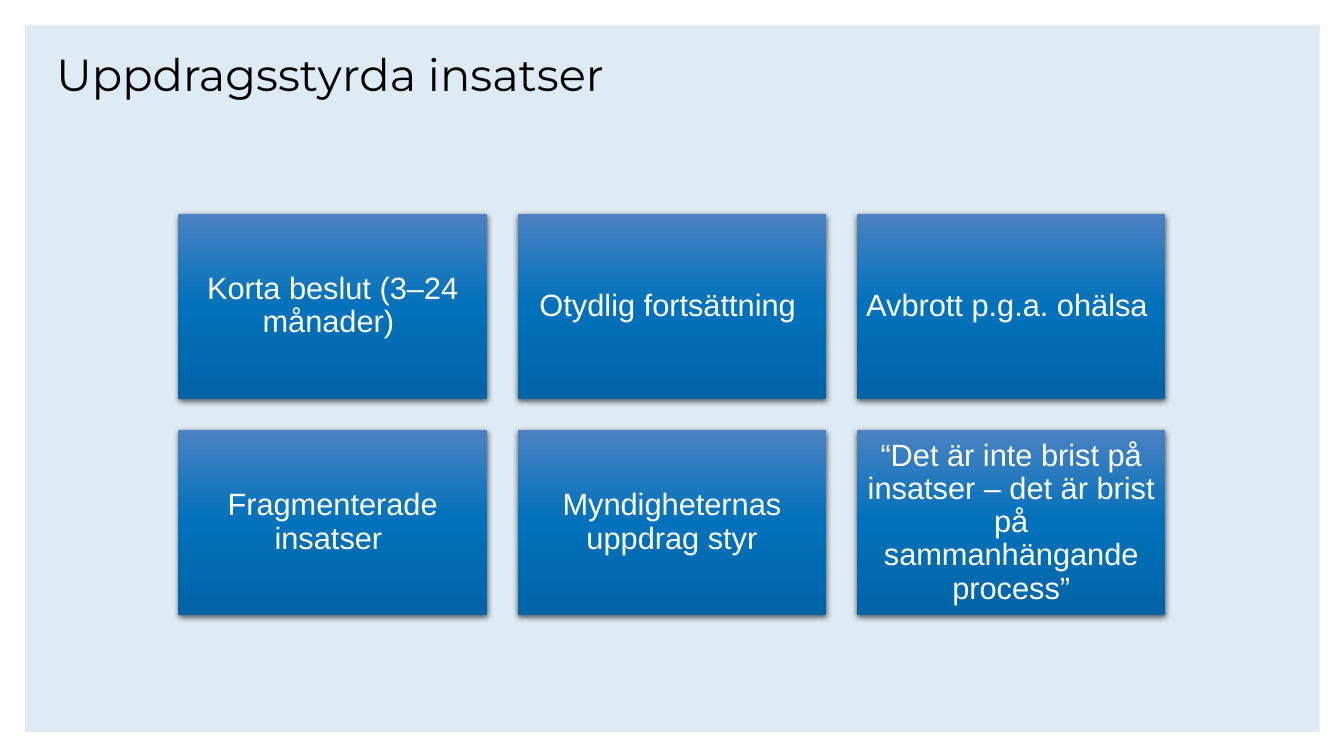
from lxml.etree import SubElement
from pptx import Presentation
from pptx.dml.color import RGBColor
from pptx.enum.shapes import MSO_SHAPE
from pptx.enum.text import MSO_ANCHOR, MSO_AUTO_SIZE, PP_ALIGN
from pptx.oxml.ns import qn
from pptx.util import Inches, Pt

HEADING = "Uppdragsstyrda insatser"
OBSTACLES = [
    "Korta beslut (3–24 månader) ",
    "Otydlig fortsättning ",
    "Avbrott p.g.a. ohälsa ",
    "Fragmenterade insatser ",
    "Myndigheternas uppdrag styr",
    "“Det är inte brist på insatser – det är brist på sammanhängande process”",
]
COLORS = {
    "panel": "DFEBF4",
    "heading": "000000",
    "card_text": "FFFFFF",
    "card_top": "4B82C2",
    "card_middle": "0071BA",
    "card_bottom": "0064A5",
    "shadow": "000000",
}
CARD_GRADIENT = [(0, "card_top"), (50, "card_middle"), (100, "card_bottom")]

SLIDE_W, SLIDE_H = 13.33, 7.5
PANEL = (0.25, 0.25, 12.84, 7.01)
HEADING_AREA = (0.56, 0.52, 12.03, 1.45)
COLUMNS = 3
GRID_LEFT, GRID_TOP = 1.77, 2.12
CARD_W, CARD_H = 3.06, 1.84
GAP = 0.305


def add_rectangle(area):
    rectangle = slide.shapes.add_shape(MSO_SHAPE.RECTANGLE, *map(Inches, area))
    rectangle.line.fill.background()
    rectangle.shadow.inherit = False
    return rectangle


def write(frame, text, size, font, color, align, anchor, inset):
    frame.text = text
    frame.word_wrap = True
    frame.auto_size = MSO_AUTO_SIZE.NONE
    frame.vertical_anchor = anchor
    frame.margin_left = frame.margin_right = Inches(inset)
    frame.margin_top = frame.margin_bottom = Inches(inset)
    paragraph = frame.paragraphs[0]
    paragraph.alignment = align
    paragraph.line_spacing = 0.9
    run = paragraph.runs[0]
    run.font.size = Pt(size)
    run.font.name = font
    run.font.color.rgb = RGBColor.from_string(COLORS[color])


def add_gradient(card):
    card.fill.gradient()
    card.fill.gradient_angle = 270
    stops = card._element.spPr.find(".//" + qn("a:gsLst"))
    for stop in list(stops):
        stops.remove(stop)
    for position, color in CARD_GRADIENT:
        stop = SubElement(stops, qn("a:gs"), pos=str(position * 1000))
        SubElement(stop, qn("a:srgbClr"), val=COLORS[color])


def add_shadow(card):
    effects = card._element.spPr.find(qn("a:effectLst"))
    shadow = SubElement(
        effects, qn("a:outerShdw"), blurRad=str(Pt(4.5)), dist=str(Pt(1.5)),
        dir="5400000", algn="ctr", rotWithShape="0",
    )
    shade = SubElement(shadow, qn("a:srgbClr"), val=COLORS["shadow"])
    SubElement(shade, qn("a:alpha"), val="63000")


presentation = Presentation()
presentation.slide_width = Inches(SLIDE_W)
presentation.slide_height = Inches(SLIDE_H)
slide = presentation.slides.add_slide(presentation.slide_layouts[5])

panel = add_rectangle(PANEL)
panel.fill.solid()
panel.fill.fore_color.rgb = RGBColor.from_string(COLORS["panel"])
slide.shapes.title._element.addprevious(panel._element)

heading = slide.shapes.title
heading.left, heading.top, heading.width, heading.height = map(Inches, HEADING_AREA)
write(heading.text_frame, HEADING, 32, "Montserrat", "heading",
      PP_ALIGN.LEFT, MSO_ANCHOR.TOP, 0)

for index, obstacle in enumerate(OBSTACLES):
    row, column = divmod(index, COLUMNS)
    card = add_rectangle((
        GRID_LEFT + column * (CARD_W + GAP),
        GRID_TOP + row * (CARD_H + GAP),
        CARD_W,
        CARD_H,
    ))
    add_gradient(card)
    add_shadow(card)
    write(card.text_frame, obstacle, 22, "Arial", "card_text",
          PP_ALIGN.CENTER, MSO_ANCHOR.MIDDLE, 0.09)

presentation.save("out.pptx")
